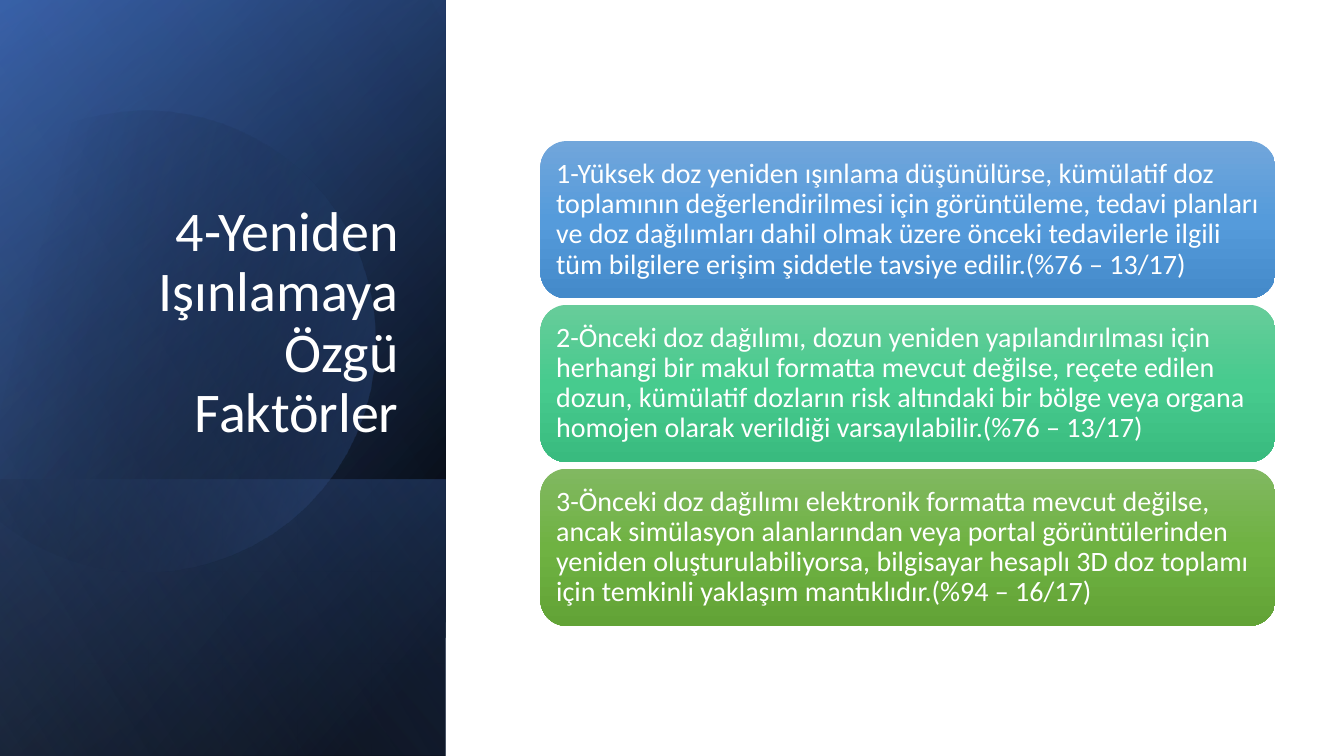
"""Builds a slide with a dark title panel and three gradient recommendation cards."""
import math

from lxml import etree
from pptx import Presentation
from pptx.dml.color import RGBColor
from pptx.enum.shapes import MSO_SHAPE
from pptx.enum.text import MSO_ANCHOR, PP_ALIGN
from pptx.oxml.ns import qn
from pptx.util import Inches, Pt

RECTANGLE, ROUNDED = MSO_SHAPE.RECTANGLE, MSO_SHAPE.ROUNDED_RECTANGLE
MIDDLE, BOTTOM = MSO_ANCHOR.MIDDLE, MSO_ANCHOR.BOTTOM
LEFT, RIGHT = PP_ALIGN.LEFT, PP_ALIGN.RIGHT

TITLE = "4-Yeniden Işınlamaya Özgü Faktörler"
RECOMMENDATIONS = [
    "1-Yüksek doz yeniden ışınlama düşünülürse, kümülatif doz toplamının "
    "değerlendirilmesi için görüntüleme, tedavi planları ve doz dağılımları dahil "
    "olmak üzere önceki tedavilerle ilgili tüm bilgilere erişim şiddetle tavsiye "
    "edilir.(%76 – 13/17)",
    "2-Önceki doz dağılımı, dozun yeniden yapılandırılması için herhangi bir makul "
    "formatta mevcut değilse, reçete edilen dozun, kümülatif dozların risk altındaki "
    "bir bölge veya organa homojen olarak verildiği varsayılabilir.(%76 – 13/17)",
    "3-Önceki doz dağılımı elektronik formatta mevcut değilse, ancak simülasyon "
    "alanlarından veya portal görüntülerinden yeniden oluşturulabiliyorsa, bilgisayar "
    "hesaplı 3D doz toplamı için temkinli yaklaşım mantıklıdır.(%94 – 16/17)",
]

THEME = {
    "font": "Calibri",
    "text": RGBColor(0xFF, 0xFF, 0xFF),
    "title_size": Pt(40),
    "card_size": Pt(20),
    "base": ([(8, "000000", 100), (100, "2F5597", 100)], 50),
    "glow": ([(0, "000000", 0), (99, "4472C4", 46)], 30),
    "footer": ([(2, "4472C4", 29), (100, "000000", 30)], 130),
    "disc": ([(29, "000000", 0), (100, "4472C4", 43)], 30),
    "sheen": ([(0, "000000", 0), (99, "8FAADC", 11)], 120),
    "cards": [
        ("71A6DB", "559BDB", "448ACA"),
        ("67CC9A", "47CB8E", "39BB7F"),
        ("81B861", "6FB242", "62A336"),
    ],
}

SLIDE_W, SLIDE_H = 13.33, 7.5
PANEL_W = 4.42
FOOTER_H = 2.74
CARD_X, CARD_Y, CARD_W, CARD_H, CARD_PITCH = 5.36, 1.4, 7.29, 1.56, 1.625
CARD_INSET = 0.08

DISC_CENTER = (1.585, 3.345)
DISC_TURN = 343.9
DISC_START = (1.49, 1.1)
DISC_SEGMENTS = [
    [(2.46, 1.12), (3.35, 1.77), (3.63, 2.75)],
    [(3.98, 3.97), (3.28, 5.23), (2.07, 5.58)],
    [(1.31, 5.8), (0.53, 5.61), (-0.03, 5.14)],
    [(-0.15, 5.03)],
    [(-0.15, 1.75)],
    [(0, 1.61)],
    [(0.23, 1.42), (0.5, 1.28), (0.8, 1.19)],
    [(1.03, 1.13), (1.26, 1.1), (1.49, 1.1)],
]
CURVE_STEPS = 16


def paint(shape, gradient):
    stops, angle = gradient
    shape.shadow.inherit = False
    shape.line.fill.background()
    shape.fill.background()
    fill = etree.Element(qn("a:gradFill"), rotWithShape="1")
    stop_list = etree.SubElement(fill, qn("a:gsLst"))
    for position, color, opacity in stops:
        stop = etree.SubElement(stop_list, qn("a:gs"), pos=str(position * 1000))
        rgb = etree.SubElement(stop, qn("a:srgbClr"), val=color)
        if opacity < 100:
            etree.SubElement(rgb, qn("a:alpha"), val=str(opacity * 1000))
    etree.SubElement(fill, qn("a:lin"), ang=str(angle * 60000), scaled="0")
    properties = shape._element.spPr
    properties.replace(properties.find(qn("a:noFill")), fill)


def write(shape, text, size, align, anchor):
    frame = shape.text_frame
    frame.word_wrap = True
    frame.vertical_anchor = anchor
    paragraph = frame.paragraphs[0]
    paragraph.alignment = align
    paragraph.line_spacing = 0.9
    run = paragraph.add_run()
    run.text = text
    run.font.name = THEME["font"]
    run.font.size = size
    run.font.color.rgb = THEME["text"]
    return frame


def add_panel_layer(slide, top, height, gradient):
    left = (PANEL_W - height) / 2
    turned_top = top + (height - PANEL_W) / 2
    layer = slide.shapes.add_shape(
        RECTANGLE, Inches(left), Inches(turned_top), Inches(height), Inches(PANEL_W))
    layer.rotation = 90
    layer._element.spPr.find(qn("a:xfrm")).set("flipH", "1")
    paint(layer, gradient)


def disc_outline():
    outline = [DISC_START]
    for segment in DISC_SEGMENTS:
        if len(segment) == 1:
            outline += segment
            continue
        corners = [outline[-1], *segment]
        for step in range(1, CURVE_STEPS + 1):
            t = step / CURVE_STEPS
            weights = [math.comb(3, k) * t**k * (1 - t) ** (3 - k) for k in range(4)]
            outline.append(tuple(
                sum(w * corner[axis] for w, corner in zip(weights, corners))
                for axis in (0, 1)))
    return outline


def add_disc(slide):
    center_x, center_y = DISC_CENTER
    turn = math.radians(-DISC_TURN)
    points = []
    for x, y in disc_outline():
        dx, dy = x - center_x, y - center_y
        points.append((
            Inches(center_x + dx * math.cos(turn) - dy * math.sin(turn)),
            Inches(center_y + dx * math.sin(turn) + dy * math.cos(turn))))
    builder = slide.shapes.build_freeform(*points[0])
    builder.add_line_segments(points[1:], close=True)
    disc = builder.convert_to_shape()
    disc.rotation = DISC_TURN
    paint(disc, THEME["disc"])


def add_card(slide, index, recommendation, colors):
    card = slide.shapes.add_shape(
        ROUNDED, Inches(CARD_X), Inches(CARD_Y + index * CARD_PITCH),
        Inches(CARD_W), Inches(CARD_H))
    paint(card, ([(50 * k, color, 100) for k, color in enumerate(colors)], 90))
    frame = write(card, recommendation, THEME["card_size"], LEFT, MIDDLE)
    frame.margin_left = frame.margin_right = Inches(CARD_INSET)
    frame.margin_top = frame.margin_bottom = Inches(CARD_INSET)


def main():
    deck = Presentation()
    deck.slide_width, deck.slide_height = Inches(SLIDE_W), Inches(SLIDE_H)
    slide = deck.slides.add_slide(deck.slide_layouts[6])

    add_panel_layer(slide, 0, SLIDE_H, THEME["base"])
    add_panel_layer(slide, 0, SLIDE_H, THEME["glow"])
    add_panel_layer(slide, SLIDE_H - FOOTER_H, FOOTER_H, THEME["footer"])
    add_disc(slide)
    add_panel_layer(slide, 0, SLIDE_H, THEME["sheen"])

    heading = slide.shapes.add_textbox(
        Inches(0.64), Inches(1.84), Inches(3.41), Inches(2.62))
    write(heading, TITLE, THEME["title_size"], RIGHT, BOTTOM)

    for index, (text, colors) in enumerate(zip(RECOMMENDATIONS, THEME["cards"])):
        add_card(slide, index, text, colors)
    deck.save("out.pptx")


if __name__ == "__main__":
    main()
